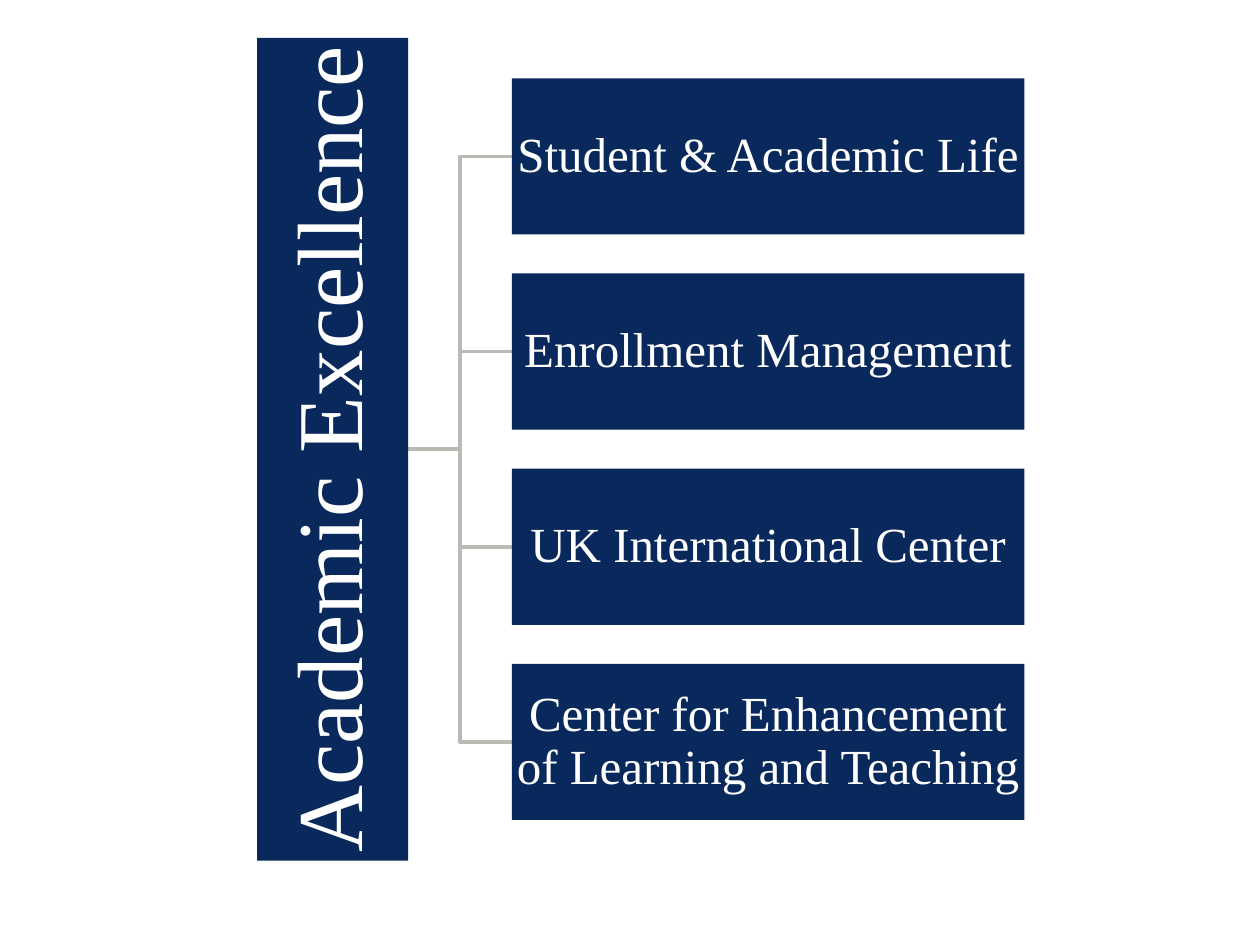
import pptx
import pptx.dml.color
import pptx.enum.shapes
import pptx.enum.text
import pptx.util

NAVY = pptx.dml.color.RGBColor(0x09, 0x29, 0x5C)
GRAY = pptx.dml.color.RGBColor(0xB8, 0xBA, 0xB3)
WHITE = pptx.dml.color.RGBColor(0xFF, 0xFF, 0xFF)
FONT = "Times New Roman"
Inches = pptx.util.Inches

TITLE = "Academic Excellence"
UNITS = [
    "Student & Academic Life",
    "Enrollment Management",
    "UK International Center",
    "Center for Enhancement of Learning and Teaching",
]


def add_label(page, left, top, width, height, text, size, inset):
    """Add a navy rectangle with centred white text."""
    box = page.shapes.add_shape(
        pptx.enum.shapes.MSO_SHAPE.RECTANGLE,
        Inches(left), Inches(top), Inches(width), Inches(height))
    box.shadow.inherit = False
    box.fill.solid()
    box.fill.fore_color.rgb = NAVY
    box.line.fill.background()
    frame = box.text_frame
    frame.word_wrap = True
    frame.vertical_anchor = pptx.enum.text.MSO_ANCHOR.MIDDLE
    frame.margin_left = frame.margin_right = Inches(inset)
    frame.margin_top = frame.margin_bottom = Inches(inset)
    para = frame.paragraphs[0]
    para.alignment = pptx.enum.text.PP_ALIGN.CENTER
    para.line_spacing = 0.9
    span = para.add_run()
    span.text = text
    span.font.name = FONT
    span.font.size = pptx.util.Pt(size)
    span.font.color.rgb = WHITE
    return box


def add_branch(page, start_x, start_y, end_x, end_y):
    """Add an elbow line that turns halfway between its ends."""
    middle_x = (start_x + end_x) / 2
    points = [(Inches(x), Inches(y)) for x, y in
              [(start_x, start_y), (middle_x, start_y), (middle_x, end_y), (end_x, end_y)]]
    builder = page.shapes.build_freeform(*points[0])
    builder.add_line_segments(points[1:], close=False)
    branch = builder.convert_to_shape()
    branch.shadow.inherit = False
    branch.fill.background()
    branch.line.color.rgb = GRAY
    branch.line.width = pptx.util.Pt(2)


def add_hierarchy(page, left, top, width, height):
    """Fill the given box with the vertical root bar and its units."""
    root_width = width * 0.197
    unit_width = width * 0.668
    unit_left = left + width - unit_width
    middle_y = top + height / 2

    # Units are four fifths of a row, the gaps one fifth
    unit_height = root_width * 1.033
    row = unit_height / 0.8
    first_y = middle_y - row * (len(UNITS) - 1) / 2
    centers = [first_y + row * index for index in range(len(UNITS))]

    # Branches lie behind the boxes
    for center in reversed(centers):
        add_branch(page, left + root_width, middle_y, unit_left, center)

    # Root bar, turned to read upwards
    root = add_label(page, left + (root_width - height) / 2, middle_y - root_width / 2,
                     height, root_width, TITLE, 53, 0.04)
    root.rotation = 270

    # Units
    for center, unit in zip(centers, UNITS):
        add_label(page, unit_left, center - unit_height / 2,
                  unit_width, unit_height, unit, 28, 0.02)


def main():
    deck = pptx.Presentation()
    deck.slide_width = Inches(10)
    deck.slide_height = Inches(7.5)
    page = deck.slides.add_slide(deck.slide_layouts[6])
    add_hierarchy(page, 2.04, 0.3, 6.09, 6.53)
    deck.save("out.pptx")


if __name__ == "__main__":
    main()
